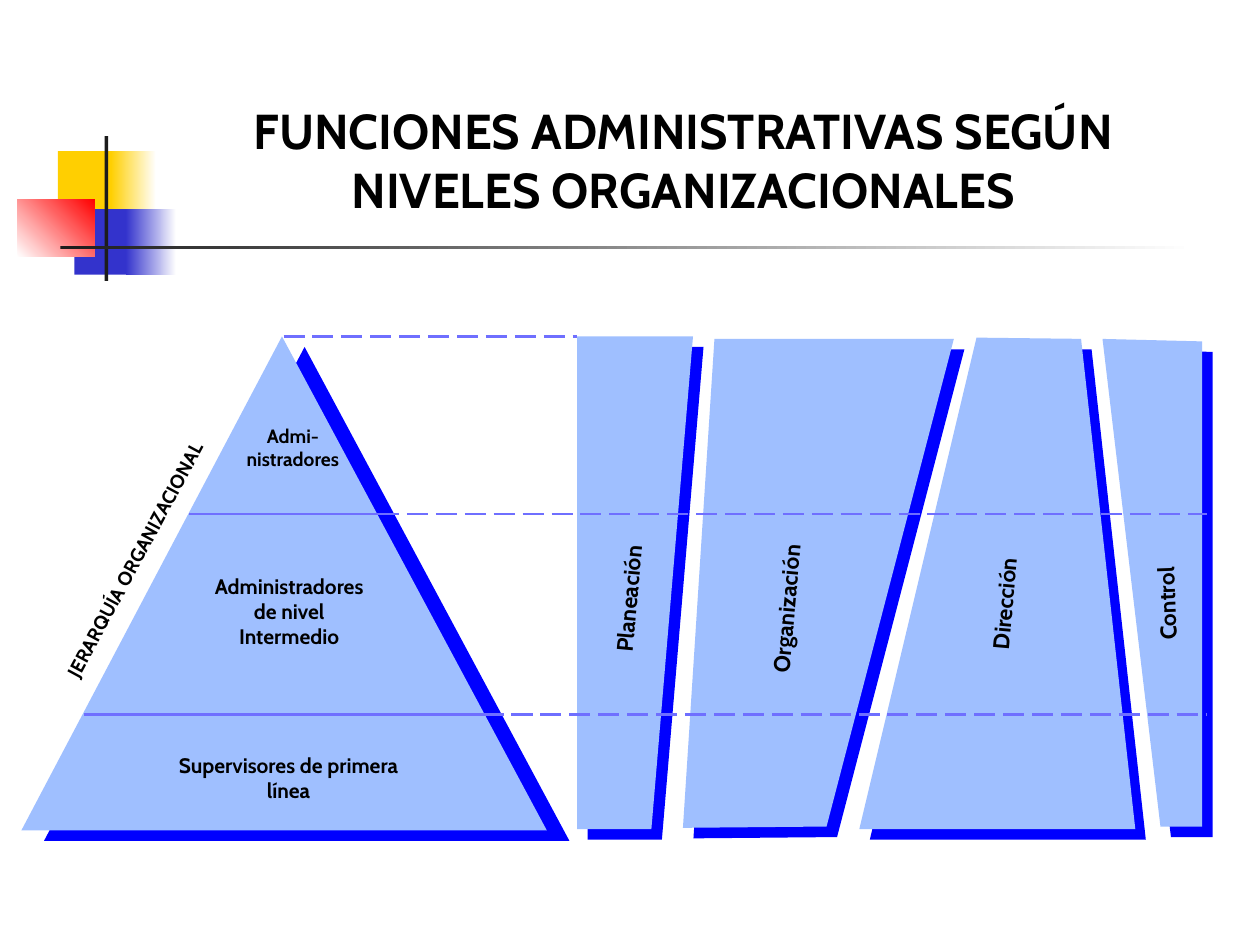
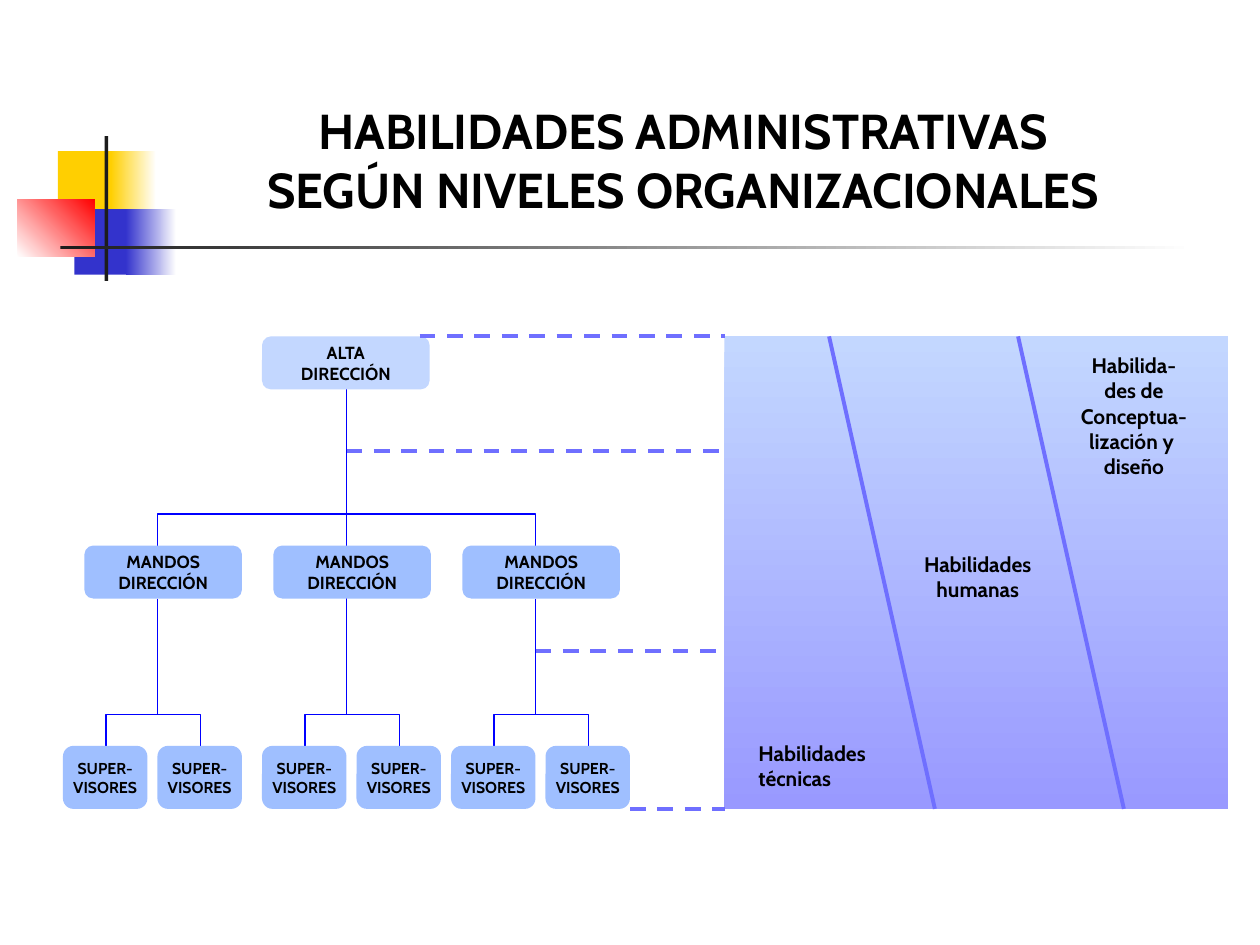
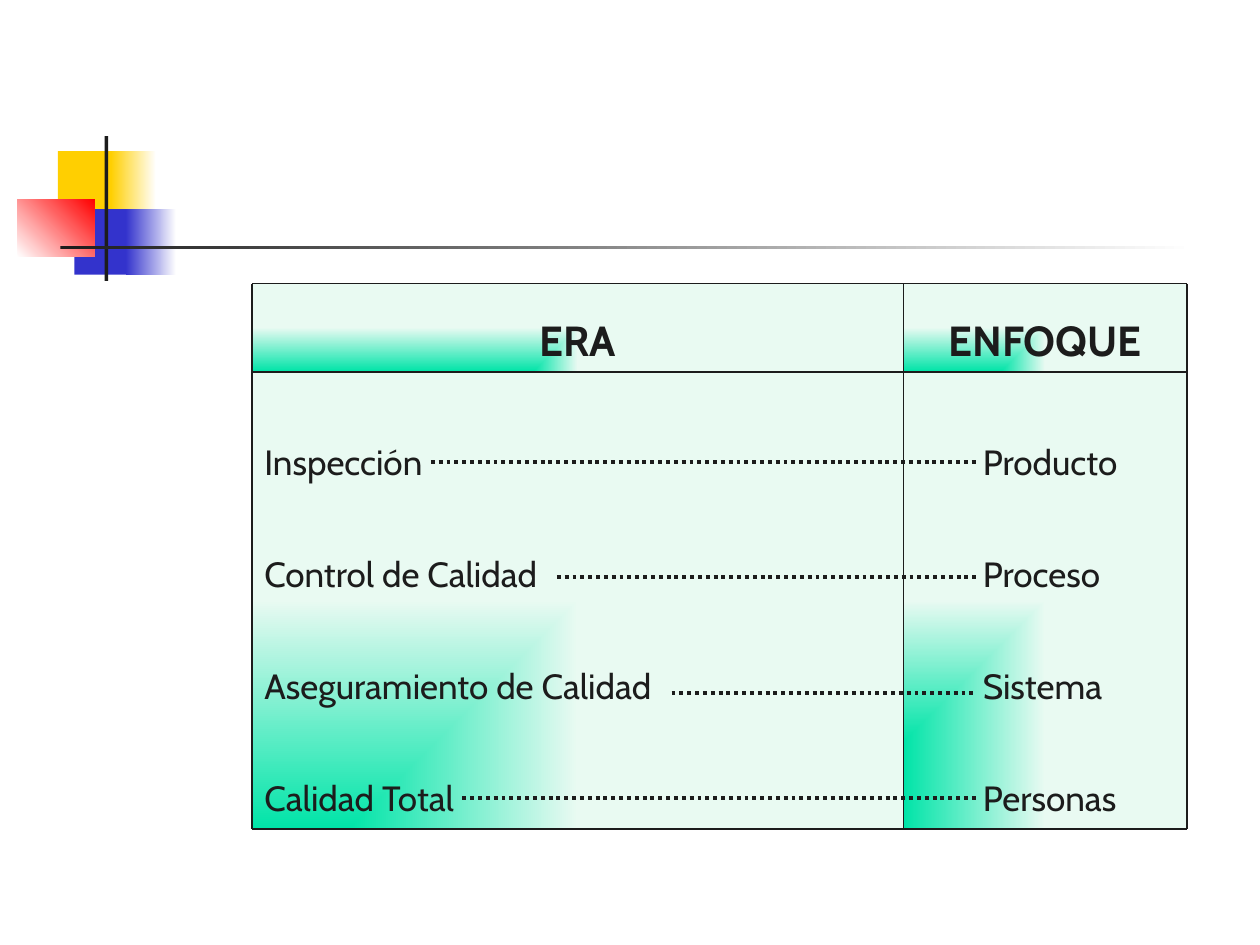
from lxml.etree import SubElement
from pptx import Presentation
from pptx.dml.color import RGBColor
from pptx.enum.dml import MSO_LINE
from pptx.enum.shapes import MSO_CONNECTOR, MSO_SHAPE
from pptx.enum.text import MSO_ANCHOR, MSO_AUTO_SIZE, PP_ALIGN
from pptx.oxml.ns import qn
from pptx.util import Pt

PX = 9144  # EMU per px, 100 px to the inch
FONT = "Cabin"
BLACK, INK, WHITE = "000000", "1C1C1C", "FFFFFF"
SKY, PALE, BLUE, VIOLET = "9FBFFF", "C3D7FF", "0000FF", "6F6FFF"
MINT = ("00E4A8", "E9FAF2")


def rgb(code):
    return RGBColor.from_string(code)


class Deck:
    """Holds the style and the current slide."""

    def __init__(self):
        self.file = Presentation()
        self.file.slide_width = 1000 * PX
        self.file.slide_height = 750 * PX

    def page(self, *title):
        """Start a slide with the shared squares, bars and title."""
        self.slide = self.file.slides.add_slide(self.file.slide_layouts[6])
        self.shapes = self.slide.shapes
        self.rect(46, 120, 48, 52, "FFCF01")
        self.rect(88, 120, 36, 52, ("FFCF01", WHITE))
        self.rect(59, 166, 46, 52, "3333CC")
        self.rect(100, 166, 40, 52, ("3333CC", WHITE))
        self.rect(14, 158, 61, 46, (WHITE, "FF0000"), angle=45)
        self.rect(83, 108, 3, 115, INK)
        self.rect(48, 195, 900, 3, (INK, WHITE))
        if title:
            self.text(142, 75, 800, 103, title, 28)

    def paint(self, shape, fill, angle=0, corner=False):
        """Fill with a colour, a pair of colours, or nothing; no outline."""
        shape.shadow.inherit = False
        shape.line.fill.background()
        if fill is None:
            shape.fill.background()
        elif isinstance(fill, str):
            shape.fill.solid()
            shape.fill.fore_color.rgb = rgb(fill)
        else:
            shape.fill.gradient()
            shape.fill.gradient_angle = angle
            for stop, code in zip(shape.fill.gradient_stops, fill):
                stop.color.rgb = rgb(code)
        if corner:  # gradient spreads from the bottom left corner
            grad = shape.element.spPr.find(qn("a:gradFill"))
            grad.remove(grad.find(qn("a:lin")))
            way = SubElement(grad, qn("a:path"), path="rect")
            SubElement(way, qn("a:fillToRect"), t="100000", r="100000")

    def shade(self, shape, far, angle):
        """Cast a hard blue shadow, far points away."""
        effects = shape.element.spPr.find(qn("a:effectLst"))
        cast = SubElement(effects, qn("a:outerShdw"), dist=str(Pt(far)),
                          dir=str(angle * 60000), algn="ctr", rotWithShape="0")
        SubElement(cast, qn("a:srgbClr"), val=BLUE)

    def rect(self, x, y, w, h, fill, angle=0, corner=False, kind=MSO_SHAPE.RECTANGLE):
        shape = self.shapes.add_shape(kind, x * PX, y * PX, w * PX, h * PX)
        self.paint(shape, fill, angle, corner)
        return shape

    def free(self, points, fill=None, line=None):
        pen = self.shapes.build_freeform(*points[0], scale=PX)
        pen.add_line_segments(points[1:], close=fill is not None)
        shape = pen.convert_to_shape()
        self.paint(shape, fill)
        if line:
            shape.line.color.rgb = rgb(line)
            shape.line.width = Pt(0.75)
        return shape

    def line(self, x1, y1, x2, y2, color, width, dash=None):
        line = self.shapes.add_connector(
            MSO_CONNECTOR.STRAIGHT, x1 * PX, y1 * PX, x2 * PX, y2 * PX)
        line.line.color.rgb = rgb(color)
        line.line.width = Pt(width)
        if dash:
            line.line.dash_style = dash
        SubElement(line.element.spPr, qn("a:effectLst"))

    def rows(self, frame, rows, size, color=BLACK, bold=True,
             align=PP_ALIGN.CENTER, space=None):
        """Set one paragraph for each row."""
        for i, row in enumerate(rows):
            par = frame.add_paragraph() if i else frame.paragraphs[0]
            par.text = row
            par.alignment = align
            par.font.name, par.font.size, par.font.bold = FONT, Pt(size), bold
            par.font.color.rgb = rgb(color)
            if space:
                par.line_spacing = space
                par.space_before = Pt(size * 0.2)

    def text(self, x, y, w, h, rows, size, turn=0, wrap=True, align=PP_ALIGN.CENTER):
        box = self.shapes.add_textbox(x * PX, y * PX, w * PX, h * PX)
        box.rotation = turn
        box.text_frame.word_wrap = wrap
        box.text_frame.auto_size = MSO_AUTO_SIZE.SHAPE_TO_FIT_TEXT
        self.rows(box.text_frame, rows, size, align=align)

    def node(self, x, y, w, h, rows, size, fill=SKY):
        """Rounded box of the organisation chart."""
        box = self.rect(x, y, w, h, fill, kind=MSO_SHAPE.ROUNDED_RECTANGLE)
        box.text_frame.word_wrap = False
        box.text_frame.vertical_anchor = MSO_ANCHOR.MIDDLE
        self.rows(box.text_frame, rows, size)

    def cell(self, x, y, w, h, rows, size, bold, align, space, inset=10):
        box = self.rect(x, y, w, h, MINT, corner=True)
        box.text_frame.word_wrap = True
        box.text_frame.vertical_anchor = MSO_ANCHOR.TOP
        box.text_frame.margin_left = inset * PX
        self.rows(box.text_frame, rows, size, INK, bold, align, space)


def levels(deck):
    deck.page("FUNCIONES ADMINISTRATIVAS SEGÚN NIVELES ORGANIZACIONALES")

    # Pyramid and function bands
    peak = deck.rect(17, 267, 417, 392, SKY, kind=MSO_SHAPE.ISOSCELES_TRIANGLE)
    peak.adjustments[0] = 0.496
    deck.shade(peak, 14.3, 25)
    bands = (
        [(458, 658), (458, 267), (550, 267), (517, 658)],
        [(542, 657), (567, 269), (757, 269), (656, 656)],
        [(921, 656), (875, 269), (954, 271), (954, 656)],
        [(682, 658), (775, 268), (858, 269), (901, 658)],
    )
    for points in bands:
        deck.shade(deck.free(points, SKY), 8.5, 45)

    # Level names
    deck.text(179, 332, 107, 47, ("Admi-", "nistradores"), 11, wrap=False)
    deck.text(142, 450, 175, 70, ("Administradores", "de nivel", "Intermedio"), 12)
    deck.text(100, 592, 258, 50, ("Supervisores de primera", "línea"), 12)

    # Function names
    for name, x, y, w, turn in (("Planeación", 399, 459, 200, 275.1),
                                ("Organización", 524, 467, 200, 275.1),
                                ("Dirección", 718, 463, 158, 275.1),
                                ("Control", 847, 463, 158, 267.9)):
        deck.text(x, y, w, 32, (name,), 13, turn)

    # Level limits
    for x1, x2, y in ((225, 458, 267), (300, 958, 408), (383, 958, 567)):
        deck.line(x1, y, x2, y, VIOLET, 1.5, MSO_LINE.LONG_DASH)
    for x1, x2, y in ((150, 308, 408), (67, 392, 567)):
        deck.line(x1, y, x2, y, VIOLET, 1.5)
    deck.text(-38, 430, 289, 28, ("JERARQUÍA ORGANIZACIONAL",), 11, 298.2)


def skills(deck):
    deck.page("HABILIDADES ADMINISTRATIVAS", "SEGÚN NIVELES ORGANIZACIONALES")

    # Organisation chart
    deck.line(275, 308, 275, 567, BLUE, 0.75)
    deck.free([(125, 433), (125, 408), (425, 408), (425, 433)], line=BLUE)
    deck.node(208, 267, 133, 42, ("ALTA", "DIRECCIÓN"), 10, PALE)
    for i, left in enumerate((50, 208, 358)):
        stem = 125 + 150 * i
        if stem != 275:
            deck.line(stem, 475, stem, 567, BLUE, 0.75)
        deck.node(67 + 150 * i, 433, 125, 42, ("MANDOS", "DIRECCIÓN"), 10)
        a, b = left + 34, left + 109
        deck.free([(a, 592), (a, 567), (b, 567), (b, 592)], line=BLUE)
        for x in (left, left + 75):
            deck.node(x, 592, 67, 50, ("SUPER-", "VISORES"), 9)

    # Skills panel
    deck.rect(575, 267, 400, 375, (PALE, "9999FF"), angle=270)
    deck.text(592, 583, 118, 50, ("Habilidades", "técnicas"), 12,
              wrap=False, align=PP_ALIGN.LEFT)
    deck.text(717, 433, 118, 50, ("Habilidades", "humanas"), 12, wrap=False)
    deck.text(842, 275, 116, 110, ("Habilida-", "des de", "Conceptua-",
              "lización y ", "diseño"), 12, wrap=False)
    for x in (658, 808):
        deck.line(x, 267, x + 84, 642, VIOLET, 2.25)
    for x, y in ((333, 267), (275, 358), (425, 517), (500, 642)):
        deck.line(x, y, 575, y, VIOLET, 2.25, MSO_LINE.DASH)


def eras(deck):
    deck.page()
    left, mid, right = 200, 717, 942
    top, head, foot = 225, 295, 658

    # Columns
    columns = (
        (mid, right, 63, "ENFOQUE", ("Producto", "Proceso", "Sistema", "Personas")),
        (left, mid, 10, "ERA", ("Inspección", "Control de Calidad",
                                "Aseguramiento de Calidad", "Calidad Total")),
    )
    for x, end, inset, name, rows in columns:
        deck.cell(x, head, end - x, foot - head, rows, 20, False,
                  PP_ALIGN.LEFT, 2.5, inset)
        deck.cell(x, top, end - x, head - top, (name,), 24, True,
                  PP_ALIGN.CENTER, 1.5)

    # Rules and dotted leaders
    for x in (left, mid, right):
        deck.line(x, top, x, foot, INK, 1)
    for y in (top, head, foot):
        deck.line(left, y, right, y, INK, 1)
    for x, y in ((342, 367), (442, 458), (533, 550), (367, 633)):
        deck.line(x, y, 775, y, INK, 2.25, MSO_LINE.ROUND_DOT)


def main():
    deck = Deck()
    levels(deck)
    skills(deck)
    eras(deck)
    deck.file.save("out.pptx")


if __name__ == "__main__":
    main()
